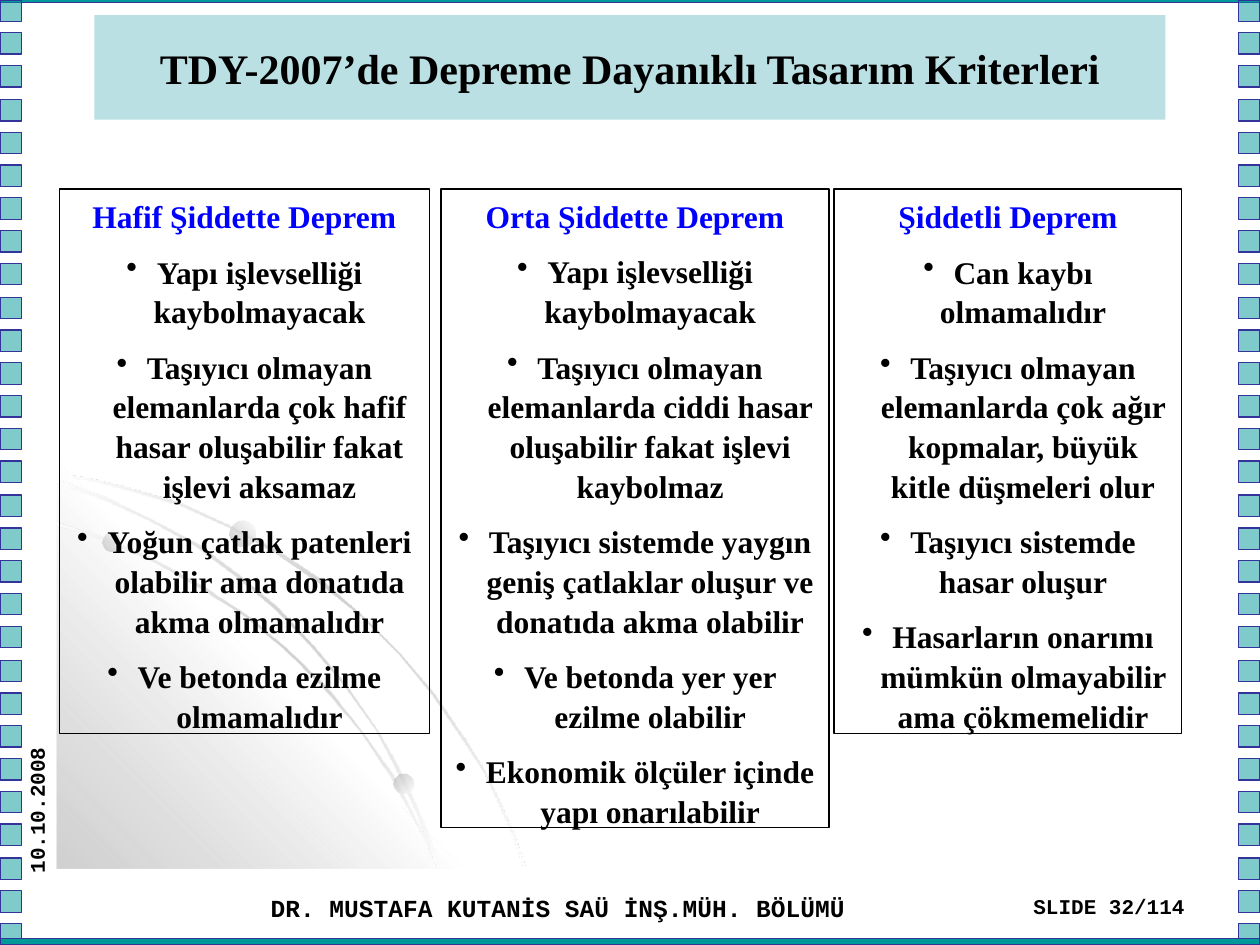
from lxml import etree
from pptx import Presentation
from pptx import util as u
from pptx.dml.color import RGBColor
from pptx.enum import shapes, text
from pptx.oxml import ns

PX = 9144
WIDTH, HEIGHT = 1000, 750
TEAL = RGBColor(0x00, 0x99, 0x99)
NAVY = RGBColor(0x33, 0x33, 0x99)
PALE = RGBColor(0xBB, 0xE0, 0xE3)
BLUE = RGBColor(0x00, 0x00, 0xFF)
BLACK = RGBColor(0x00, 0x00, 0x00)
GREY = RGBColor(0xB2, 0xB2, 0xB2)
WHITE = RGBColor(0xFF, 0xFF, 0xFF)
SERIF, MONO = "Times New Roman", "Courier New"
GREY_STOP, WHITE_STOP = (GREY, 60), (WHITE, 80)
RIBBON = (WHITE_STOP, GREY_STOP, WHITE_STOP)
WEDGE = (GREY_STOP, WHITE_STOP, GREY_STOP)
BALL = (GREY_STOP, WHITE_STOP)

OUTER_ARC = [
    (57, 21), (28, 14), (0, 9), (0, 11), (28, 16), (56, 23), (97, 35), (135, 52),
    (173, 73), (208, 97), (241, 123), (271, 153), (298, 186), (323, 223), (338, 246),
    (350, 271), (361, 296), (370, 322), (372, 322), (363, 296), (352, 271), (340, 246),
    (325, 222), (300, 185), (272, 152), (242, 122), (210, 94), (174, 70), (137, 51), (98, 33)]
TRIANGLE = [(322, 323), (0, 323), (0, 0)]
INNER_ARC = [
    (285, 288), (294, 305), (301, 322), (303, 322), (296, 304), (286, 286), (267, 249),
    (242, 214), (215, 180), (184, 150), (152, 123), (117, 100), (79, 79), (41, 62),
    (0, 49), (0, 51), (39, 64), (78, 81), (115, 102), (150, 124), (183, 152),
    (213, 182), (241, 215), (265, 251)]
MIDDLE_ARC = [
    (0, 15), (0, 18), (37, 31), (74, 48), (110, 68), (142, 92), (173, 118), (202, 148),
    (228, 179), (253, 214), (267, 241), (280, 268), (292, 296), (301, 322), (303, 322),
    (294, 294), (282, 266), (269, 239), (254, 213), (229, 177), (204, 147), (175, 116),
    (144, 90), (112, 66), (76, 47), (39, 29)]
SWEEP = [(OUTER_ARC, RIBBON, 45), (TRIANGLE, WEDGE, 315),
         (INNER_ARC, RIBBON, 45), (MIDDLE_ARC, RIBBON, 45)]
BALLS = [(36, 57, 15, 315), (267, 248, 16, 45), (137, 47, 21, 315)]

COLUMNS = [
    ((47, 150, 294, 432), "Hafif Şiddette Deprem", [
        "Yapı işlevselliği kaybolmayacak",
        "Taşıyıcı olmayan elemanlarda çok hafif hasar oluşabilir fakat işlevi aksamaz",
        "Yoğun çatlak patenleri olabilir ama donatıda akma olmamalıdır",
        "Ve betonda ezilme olmamalıdır"]),
    ((350, 150, 308, 507), "Orta Şiddette Deprem", [
        "Yapı işlevselliği kaybolmayacak",
        "Taşıyıcı olmayan elemanlarda ciddi hasar oluşabilir fakat işlevi kaybolmaz",
        "Taşıyıcı sistemde yaygın geniş çatlaklar oluşur ve donatıda akma olabilir",
        "Ve betonda yer yer ezilme olabilir",
        "Ekonomik ölçüler içinde yapı onarılabilir"]),
    ((662, 150, 276, 432), "Şiddetli Deprem", [
        "Can kaybı olmamalıdır",
        "Taşıyıcı olmayan elemanlarda çok ağır kopmalar, büyük kitle düşmeleri olur",
        "Taşıyıcı sistemde hasar oluşur",
        "Hasarların onarımı mümkün olmayabilir ama çökmemelidir"]),
]


def emu(*lengths):
    """Turn px lengths into EMU."""
    return [u.Emu(n * PX) for n in lengths]


def add_box(s, box, fill=None, line=None, kind=shapes.MSO_SHAPE.RECTANGLE):
    """Add a preset shape with an optional fill and outline."""
    sp = s.shapes.add_shape(kind, *emu(*box))
    sp.shadow.inherit = False
    if fill is None:
        sp.fill.background()
    else:
        sp.fill.solid()
        sp.fill.fore_color.rgb = fill
    if line is None:
        sp.line.fill.background()
    else:
        sp.line.color.rgb = line
        sp.line.width = u.Pt(0.75)
    return sp


def set_alpha(color, percent):
    """Give a colour element an opacity."""
    etree.SubElement(color, ns.qn("a:alpha")).set("val", str(percent * 1000))


def set_gradient(sp, stops, angle):
    """Fill a shape with evenly spaced translucent stops."""
    sp.fill.gradient()
    grad = sp.element.spPr.find(ns.qn("a:gradFill"))
    for child in list(grad):
        grad.remove(child)
    stop_list = etree.SubElement(grad, ns.qn("a:gsLst"))
    for i, (rgb, alpha) in enumerate(stops):
        gs = etree.SubElement(stop_list, ns.qn("a:gs"))
        gs.set("pos", str(100000 * i // (len(stops) - 1)))
        color = etree.SubElement(gs, ns.qn("a:srgbClr"))
        color.set("val", str(rgb))
        set_alpha(color, alpha)
    etree.SubElement(grad, ns.qn("a:lin")).set("ang", str(angle * 60000))


def add_run(p, words, size, font, color=BLACK):
    """Add one bold run to a paragraph."""
    r = p.add_run()
    r.text = words
    r.font.size, r.font.name, r.font.bold = u.Pt(size), font, True
    r.font.color.rgb = color


def set_bullet(p):
    """Give a paragraph a hanging round bullet."""
    pPr = p._p.get_or_add_pPr()
    indent = 24 * PX
    pPr.set("marL", str(indent))
    pPr.set("indent", str(-indent))
    etree.SubElement(pPr, ns.qn("a:buChar")).set("char", "•")


def add_film_strip(s, box):
    """Run a strip of evenly spaced squares down the box."""
    x, y, w, h = box
    count = 29
    for i in range(count):
        sp = add_box(s, (x, y + round(i * (h - w) / (count - 1)), w, w), TEAL, NAVY)
        set_alpha(sp.element.spPr.find(ns.qn("a:solidFill"))[0], 50)


def add_frame(s, box):
    """Edge the box with two bars and two film strips."""
    x, y, w, h = box
    bar, strip = 5, 17
    add_box(s, (x, y - 3, w, bar), TEAL, NAVY)
    for left in (x, x + w - strip):
        add_film_strip(s, (left, y, strip, h))
    add_box(s, (x, y + h - bar, w, bar), TEAL, NAVY)


def add_sweep(s, box):
    """Draw the grey corner wedge with its arcs and balls."""
    x, y = box[:2]
    for points, stops, angle in SWEEP:
        builder = s.shapes.build_freeform(*points[0], scale=PX)
        builder.add_line_segments(points[1:], close=True)
        sp = builder.convert_to_shape(*emu(x, y))
        sp.shadow.inherit = False
        sp.line.fill.background()
        set_gradient(sp, stops, angle)
    for dx, dy, size, angle in BALLS:
        sp = add_box(s, (x + dx, y + dy, size, size), kind=shapes.MSO_SHAPE.OVAL)
        set_gradient(sp, BALL, angle)


def add_label(s, box, words, size, align=text.PP_ALIGN.LEFT, rotation=0):
    """Add a one-line footer label."""
    sp = s.shapes.add_textbox(*emu(*box))
    sp.rotation = rotation
    tf = sp.text_frame
    tf.word_wrap = True
    p = tf.paragraphs[0]
    p.alignment = align
    add_run(p, words, size, MONO)


def add_title(s, box, words):
    """Add the title band."""
    tf = add_box(s, box, PALE).text_frame
    tf.word_wrap = True
    tf.vertical_anchor = text.MSO_ANCHOR.MIDDLE
    p = tf.paragraphs[0]
    p.alignment = text.PP_ALIGN.CENTER
    add_run(p, words, 24, SERIF)


def add_column(s, box, heading, bullets):
    """Add an outlined column with a heading and bullets."""
    tf = add_box(s, box, line=BLACK).text_frame
    tf.word_wrap = True
    tf.vertical_anchor = text.MSO_ANCHOR.TOP
    for i, words in enumerate([heading, *bullets]):
        p = tf.add_paragraph() if i else tf.paragraphs[0]
        p.alignment = text.PP_ALIGN.CENTER
        p.line_spacing = 1.05
        if i:
            p.space_before = u.Pt(9)
            set_bullet(p)
        add_run(p, words, 18, SERIF, BLACK if i else BLUE)


def main():
    """Build the slide and save it."""
    prs = Presentation()
    prs.slide_width, prs.slide_height = emu(WIDTH, HEIGHT)
    s = prs.slides.add_slide(prs.slide_layouts[6])
    add_frame(s, (0, 0, WIDTH, HEIGHT))
    add_sweep(s, (45, 366, 372, 323))
    add_label(s, (-52, 604, 165, 33), "10.10.2008", 12, rotation=270)
    add_label(s, (205, 704, 500, 31), "DR. MUSTAFA KUTANİS SAÜ İNŞ.MÜH. BÖLÜMÜ", 14)
    add_label(s, (756, 704, 194, 31), "SLIDE 32/114", 12, text.PP_ALIGN.RIGHT)
    add_title(s, (75, 12, 850, 83), "TDY-2007’de Depreme Dayanıklı Tasarım Kriterleri")
    for box, heading, bullets in COLUMNS:
        add_column(s, box, heading, bullets)
    prs.save("out.pptx")


if __name__ == "__main__":
    main()
